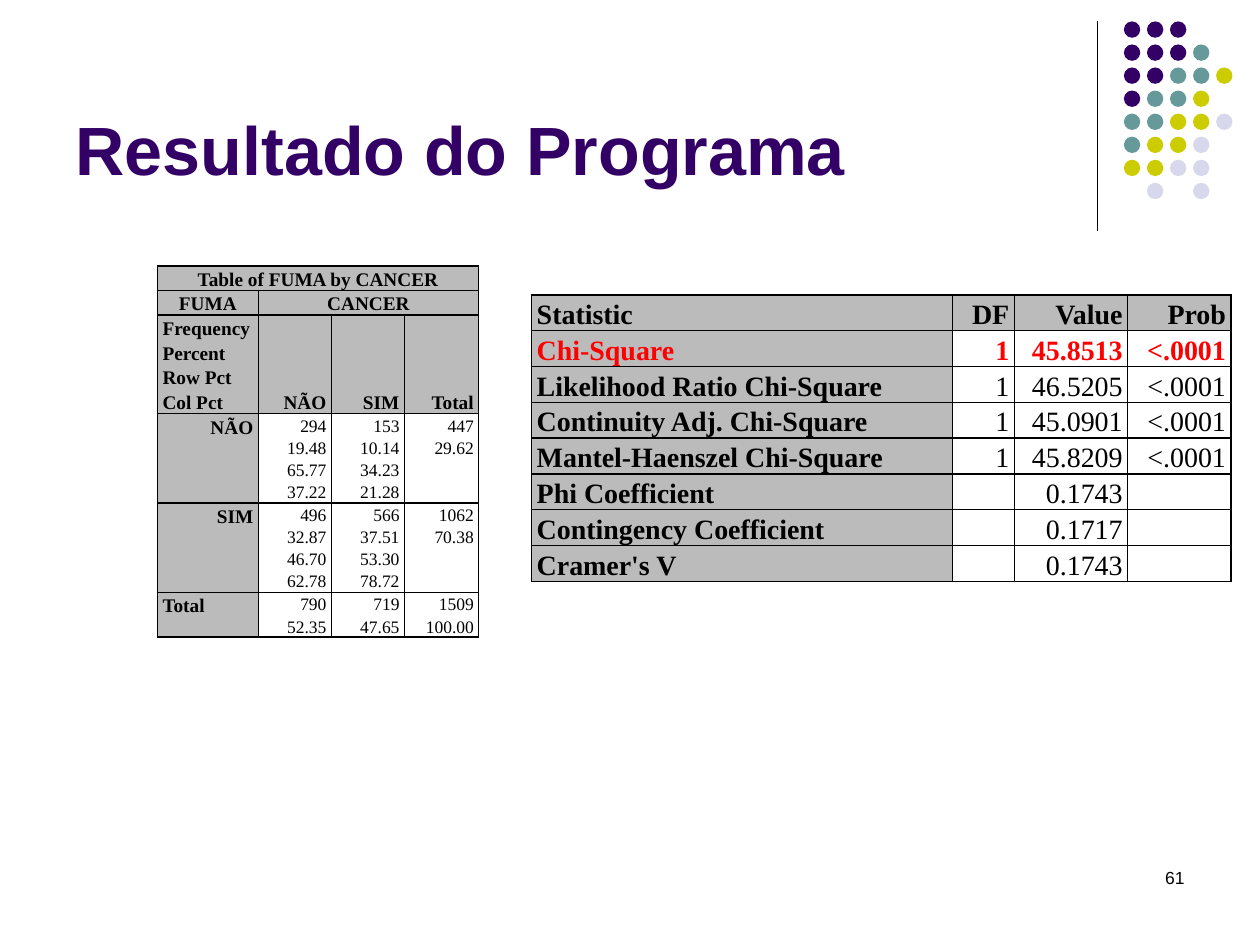
from lxml.etree import SubElement
from pptx import Presentation
from pptx.dml.color import RGBColor
from pptx.enum.shapes import MSO_CONNECTOR, MSO_SHAPE
from pptx.enum.text import MSO_ANCHOR, MSO_AUTO_SIZE, PP_ALIGN
from pptx.oxml.ns import qn
from pptx.util import Inches, Pt

COLORS = {
    "purple": "330066", "teal": "669999", "lime": "CCCC00", "lilac": "D8D8EC",
    "black": "000000", "red": "FF0000", "gray": "BBBBBB", "white": "FFFFFF",
}
ALIGN = {"l": PP_ALIGN.LEFT, "c": PP_ALIGN.CENTER, "r": PP_ALIGN.RIGHT}

# Dot pattern, one string per row
DOT_COLORS = {"P": "purple", "T": "teal", "Y": "lime", "L": "lilac"}
DOT_ROWS = ["PPP", "PPPT", "PPTTY", "PTTY", "TTYYL", "TYYL", "YYLL", " L L"]
DOT_LEFT, DOT_TOP, DOT_PITCH, DOT_SIZE = 8.92, 0.17, 0.183, 0.13

CROSS_ROWS = [
    ["Table of FUMA by CANCER", "", "", ""],
    ["FUMA", "CANCER", "", ""],
    ["Frequency\nPercent\nRow Pct\nCol Pct", "NÃO", "SIM", "Total"],
    ["NÃO", "294\n19.48\n65.77\n37.22", "153\n10.14\n34.23\n21.28", "447\n29.62"],
    ["SIM", "496\n32.87\n46.70\n62.78", "566\n37.51\n53.30\n78.72", "1062\n70.38"],
    ["Total", "790\n52.35", "719\n47.65", "1509\n100.00"],
]
STAT_ROWS = [
    ["Statistic", "DF", "Value", "Prob"],
    ["Chi-Square", "1", "45.8513", "<.0001"],
    ["Likelihood Ratio Chi-Square", "1", "46.5205", "<.0001"],
    ["Continuity Adj. Chi-Square", "1", "45.0901", "<.0001"],
    ["Mantel-Haenszel Chi-Square", "1", "45.8209", "<.0001"],
    ["Phi Coefficient", "", "0.1743", ""],
    ["Contingency Coefficient", "", "0.1717", ""],
    ["Cramer's V", "", "0.1743", ""],
]


def rgb(name):
    return RGBColor.from_string(COLORS[name])


def add_text(p, text, size, font, color="black", bold=False, align="l"):
    p.alignment = ALIGN[align]
    for i, line in enumerate(text.split("\n")):
        if i:
            p.add_line_break()
        r = p.add_run()
        r.text = line
        r.font.size, r.font.name, r.font.bold = Pt(size), font, bold
        r.font.color.rgb = rgb(color)


def add_dots(slide):
    group = slide.shapes.add_group_shape()
    for row, marks in enumerate(DOT_ROWS):
        for col, mark in enumerate(marks):
            if mark == " ":
                continue
            s = group.shapes.add_shape(
                MSO_SHAPE.OVAL,
                Inches(DOT_LEFT + col * DOT_PITCH), Inches(DOT_TOP + row * DOT_PITCH),
                Inches(DOT_SIZE), Inches(DOT_SIZE))
            s.shadow.inherit = False
            s.fill.solid()
            s.fill.fore_color.rgb = rgb(DOT_COLORS[mark])
            s.line.fill.background()


def add_rule(slide, x, top, bottom):
    s = slide.shapes.add_connector(
        MSO_CONNECTOR.STRAIGHT, Inches(x), Inches(top), Inches(x), Inches(bottom))
    s.line.color.rgb = rgb("black")
    s.line.width = Pt(0.75)
    SubElement(s._element.spPr, qn("a:effectLst"))


def set_borders(cell):
    tc_pr = cell._tc.get_or_add_tcPr()
    for i, side in enumerate(("lnL", "lnR", "lnT", "lnB")):
        ln = tc_pr.makeelement(qn("a:" + side), {"w": str(Pt(1))})
        fill = SubElement(ln, qn("a:solidFill"))
        SubElement(fill, qn("a:srgbClr"), val=COLORS["black"])
        tc_pr.insert(i, ln)


def fill_cell(cell, text, size, fill, color, bold, align, anchor):
    cell.margin_left = cell.margin_right = Inches(0.04)
    cell.margin_top = cell.margin_bottom = 0
    cell.vertical_anchor = anchor
    cell.fill.solid()
    cell.fill.fore_color.rgb = rgb(fill)
    set_borders(cell)
    p = cell.text_frame.paragraphs[0]
    p.line_spacing = 1.15
    if text:
        add_text(p, text, size, "Times New Roman", color, bold, align)
    else:  # keeps an empty cell from stretching its row
        SubElement(p._p, qn("a:endParaRPr"), sz=str(size * 100))


def add_grid(slide, left, top, widths, heights, rows, style):
    """style(row, col) gives size, fill, color, bold, align and anchor."""
    frame = slide.shapes.add_table(
        len(rows), len(widths), Inches(left), Inches(top),
        Inches(sum(widths)), Inches(sum(heights)))
    table = frame.table
    table.first_row = table.horz_banding = False
    for column, width in zip(table.columns, widths):
        column.width = Inches(width)
    for i, (row, height) in enumerate(zip(rows, heights)):
        table.rows[i].height = Inches(height)
        for j, text in enumerate(row):
            fill_cell(table.cell(i, j), text, *style(i, j))
    return table


def cross_style(row, col):
    head = row < 3 or col == 0
    if row < 2:
        align = "c"
    else:
        align = "l" if (row, col) in ((2, 0), (5, 0)) else "r"
    bottom = row < 2 or (row == 2 and col > 0)
    return (11 if head else 10, "gray" if head else "white", "black", head, align,
            MSO_ANCHOR.BOTTOM if bottom else MSO_ANCHOR.TOP)


def stat_style(row, col):
    head = row == 0 or col == 0
    return (16, "gray" if head else "white", "red" if row == 1 else "black",
            head or row == 1, "r" if col else "l",
            MSO_ANCHOR.TOP if row else MSO_ANCHOR.BOTTOM)


def main():
    prs = Presentation()
    prs.slide_width, prs.slide_height = Inches(10), Inches(7.5)
    slide = prs.slides.add_slide(prs.slide_layouts[5])

    # Corner decoration
    add_rule(slide, 8.71, 0.17, 1.83)
    add_dots(slide)

    # Title
    title = slide.shapes.title
    title.left, title.top = Inches(0.5), Inches(0.13)
    title.width, title.height = Inches(8.25), Inches(1.42)
    tf = title.text_frame
    tf.auto_size = MSO_AUTO_SIZE.NONE
    tf.vertical_anchor = MSO_ANCHOR.BOTTOM
    add_text(tf.paragraphs[0], "Resultado do Programa", 39, "Arial", "purple", True)

    # Cross table of frequencies
    table = add_grid(slide, 1.25, 2.11, [0.8, 0.58, 0.58, 0.59],
                     [0.19, 0.19, 0.78, 0.71, 0.71, 0.35], CROSS_ROWS, cross_style)
    table.cell(0, 0).merge(table.cell(0, 3))
    table.cell(1, 1).merge(table.cell(1, 3))

    # Test statistics
    add_grid(slide, 4.22, 2.34, [3.34, 0.49, 0.9, 0.82],
             [0.284] * len(STAT_ROWS), STAT_ROWS, stat_style)

    # Page number
    box = slide.shapes.add_textbox(Inches(7.17), Inches(6.83), Inches(2.33), Inches(0.5))
    box.text_frame.word_wrap = True
    add_text(box.text_frame.paragraphs[0], "61", 10, "Arial", align="r")

    prs.save("out.pptx")


if __name__ == "__main__":
    main()
